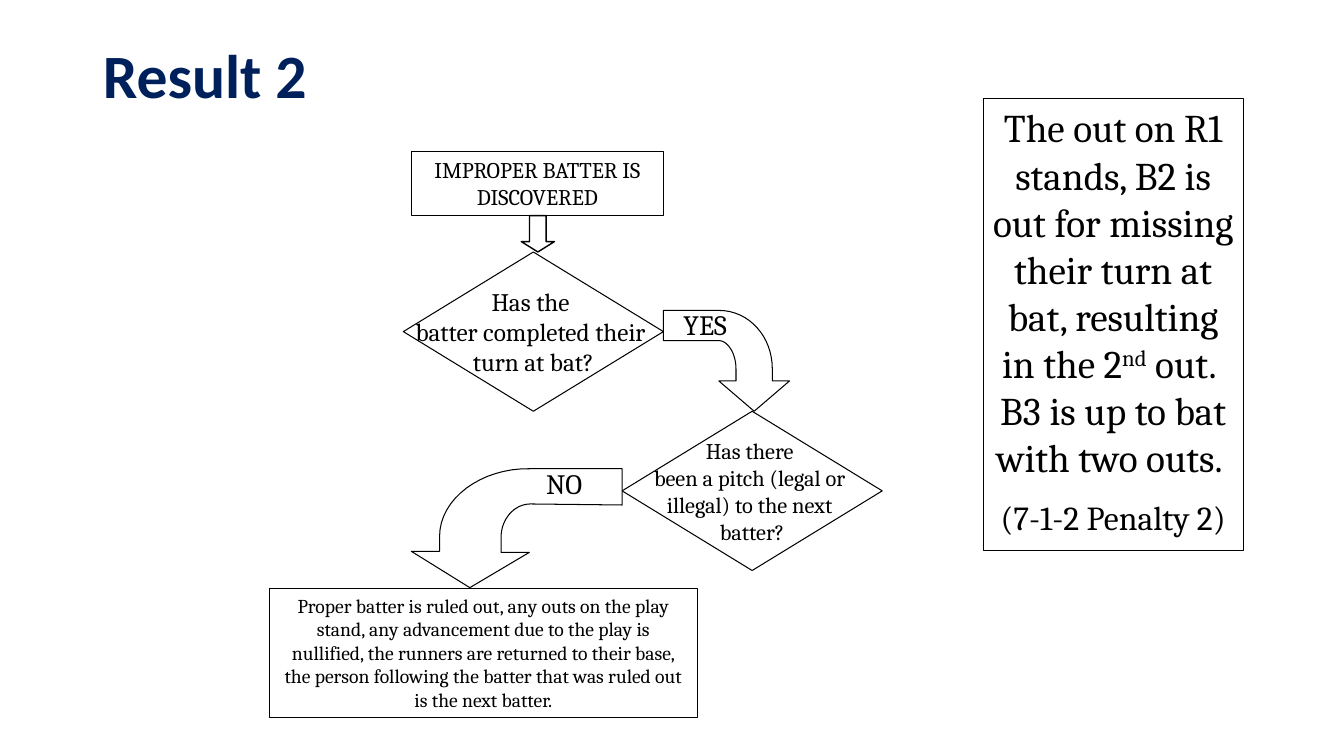
from lxml import etree
from pptx import Presentation
from pptx.dml.color import RGBColor
from pptx.enum import shapes, text
from pptx.util import Inches, Pt

NAVY = RGBColor(0x00, 0x20, 0x5B)
BLACK = RGBColor(0, 0, 0)
WHITE = RGBColor(255, 255, 255)
BODY_FONT = "Cambria"
SHAPE = shapes.MSO_SHAPE
ANCHOR = text.MSO_ANCHOR
CURVE_STEPS = 16


def style_outline(sp, width=0.75):
    sp.shadow.inherit = False
    sp.fill.solid()
    sp.fill.fore_color.rgb = WHITE
    sp.line.color.rgb = BLACK
    sp.line.width = Pt(width)


def style_run(r, size, font=BODY_FONT, color=BLACK):
    r.font.size = Pt(size)
    r.font.name = font
    r.font.color.rgb = color


def write_lines(sp, lines, size, anchor=ANCHOR.TOP, wrap=True):
    tf = sp.text_frame
    tf.word_wrap = wrap
    tf.vertical_anchor = anchor
    tf.text = "\n".join(lines)
    for p in tf.paragraphs:
        p.alignment = text.PP_ALIGN.CENTER
        for r in p.runs:
            style_run(r, size)
    return tf


def add_box(slide, kind, at, lines=(), size=16, **layout):
    sp = slide.shapes.add_shape(kind, *map(Inches, at))
    style_outline(sp)
    write_lines(sp, lines, size, **layout)
    return sp


def add_decision(slide, left, top, lines, size):
    add_box(slide, SHAPE.FLOWCHART_DECISION, (left, top, 2.58, 1.58), lines,
            size, anchor=ANCHOR.MIDDLE, wrap=False)


def add_label(slide, at, label):
    sp = slide.shapes.add_textbox(*map(Inches, at))
    write_lines(sp, [label], 20, wrap=False)


def bend(start, c1, c2, end):
    """Points along a cubic curve, without its start."""
    steps = [i / CURVE_STEPS for i in range(1, CURVE_STEPS + 1)]
    return [tuple((1 - t) ** 3 * a + 3 * (1 - t) ** 2 * t * b
                  + 3 * (1 - t) * t ** 2 * c + t ** 3 * d
                  for a, b, c, d in zip(start, c1, c2, end)) for t in steps]


def add_bent_arrow(slide, head, outer, tail, inner, head_end):
    """Arrow outline: head corners, outer curve, square tail, inner curve."""
    points = (head + [outer[0]] + bend(*outer) + tail
              + [inner[0]] + bend(*inner) + head_end)
    points = [(Inches(x), Inches(y)) for x, y in points]
    builder = slide.shapes.build_freeform(*points[0])
    builder.add_line_segments(points[1:], close=True)
    style_outline(builder.convert_to_shape())


def add_title(slide, title):
    sp = slide.shapes.title
    sp.left, sp.top, sp.width, sp.height = map(Inches, (0.92, 0.4, 11.5, 1.45))
    tf = sp.text_frame
    tf.text = title
    tf.vertical_anchor = ANCHOR.TOP
    p = tf.paragraphs[0]
    p.alignment = text.PP_ALIGN.LEFT
    p.line_spacing = 0.9
    style_run(p.runs[0], 44, "Calibri", NAVY)
    p.runs[0].font.bold = True


def add_ruling(slide):
    sp = add_box(slide, SHAPE.RECTANGLE, (9.75, 0.98, 2.58, 4.48))
    tf = write_lines(sp, [
        "The out on R1 stands, B2 is out for missing their turn at bat, "
        "resulting in the 2", "(7-1-2 Penalty 2)"], 28)
    p, reference = tf.paragraphs
    for part in ("nd", " out.  B3 is up to bat with two outs. "):
        r = p.add_run()
        r.text = part
        style_run(r, 28)
    p.runs[1].font._element.set("baseline", "30000")
    reference.space_before = Pt(12)
    reference.runs[0].font.size = Pt(24)


def main():
    prs = Presentation()
    prs.slide_width, prs.slide_height = Inches(13.33), Inches(7.5)
    slide = prs.slides.add_slide(prs.slide_layouts[5])
    add_title(slide, "Result 2")

    # Start of the flow and first question
    add_box(slide, SHAPE.RECTANGLE, (4.08, 1.5, 2.5, 0.64),
            ["IMPROPER BATTER IS DISCOVERED"], 16)
    add_decision(slide, 4, 2.5, ["Has the ", "batter completed their ",
                                 "turn at bat?"], 18)
    down = add_box(slide, SHAPE.DOWN_ARROW, (5.17, 2.14, 0.33, 0.36))
    down.adjustments[1] = 0.312
    down.line.width = Pt(1)

    # Outcome and second question
    add_box(slide, SHAPE.RECTANGLE, (2.67, 5.84, 4.25, 1.28),
            ["Proper batter is ruled out, any outs on the play stand, any "
             "advancement due to the play is nullified, the runners are "
             "returned to their base, the person following the batter that "
             "was ruled out is the next batter."], 14)
    add_decision(slide, 6.17, 4.08, ["Has there ", "been a pitch (legal or ",
                                     "illegal) to the next ", "batter?"], 16)

    # NO branch
    add_bent_arrow(
        slide,
        head=[(4.66, 5.83), (4.08, 5.47), (4.36, 5.47)],
        outer=[(4.36, 5.32), (4.36, 4.95), (4.77, 4.64), (5.26, 4.65)],
        tail=[(6.17, 4.65), (6.17, 5.01)],
        inner=[(5.26, 5), (5.1, 5), (4.97, 5.15), (4.97, 5.33)],
        head_end=[(4.97, 5.48), (5.25, 5.48)])
    add_label(slide, (5.29, 4.58, 0.61, 0.44), "NO")

    # YES branch
    add_bent_arrow(
        slide,
        head=[(7.48, 4.08), (7.83, 3.78), (7.66, 3.78)],
        outer=[(7.66, 3.66), (7.66, 3.34), (7.43, 3.08), (7.13, 3.08)],
        tail=[(6.58, 3.08), (6.58, 3.38)],
        inner=[(7.13, 3.38), (7.22, 3.38), (7.3, 3.51), (7.3, 3.66)],
        head_end=[(7.3, 3.78), (7.13, 3.78)])
    add_label(slide, (6.63, 3, 0.73, 0.44), "YES")

    # Ruling
    add_ruling(slide)
    prs.save("out.pptx")


if __name__ == "__main__":
    main()
